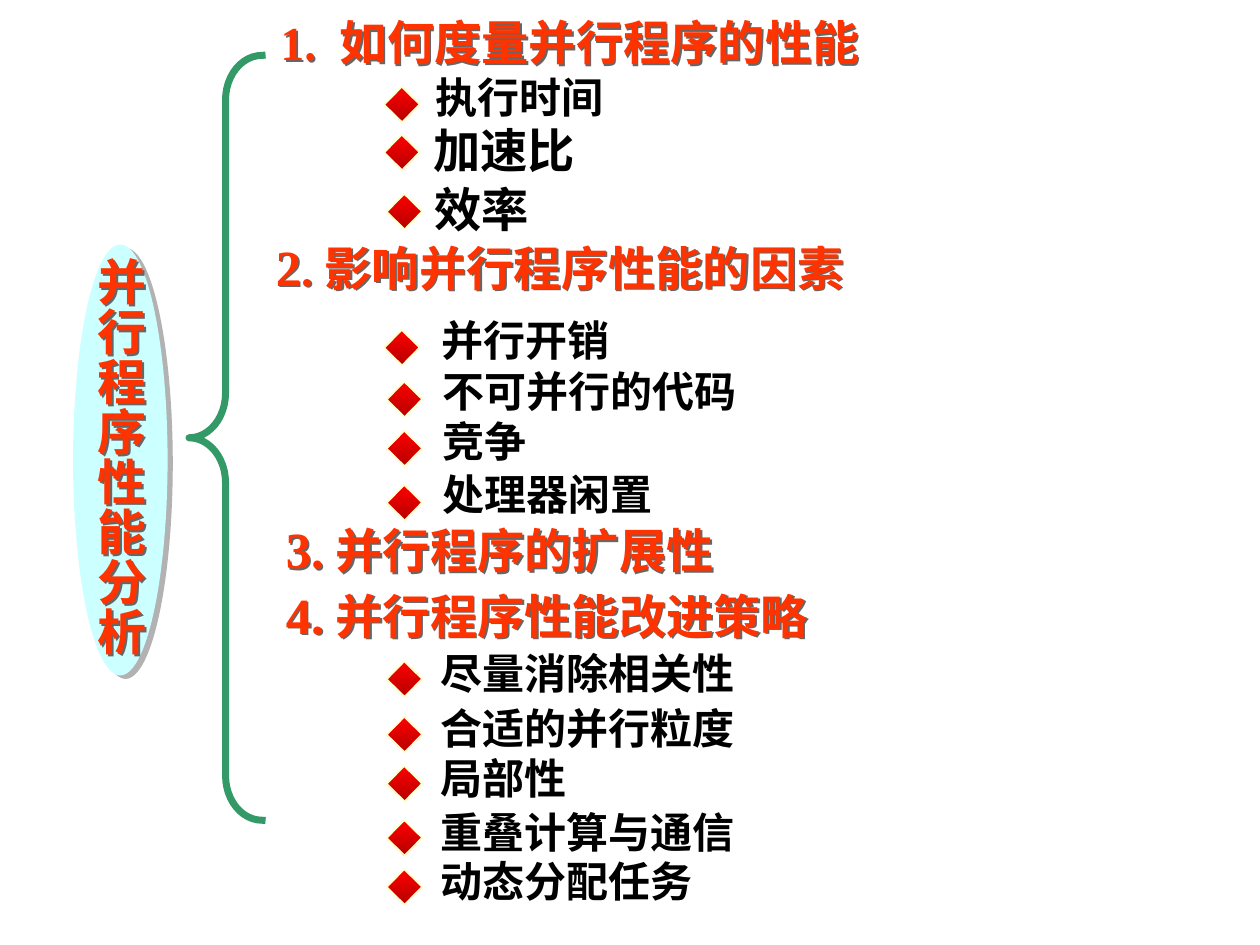
import pptx
import pptx.util
import pptx.dml.color
import pptx.enum.shapes
import pptx.enum.text
import pptx.oxml
import pptx.oxml.ns

INK = {"head": "FF3300", "item": "000000", "oval": "CCFFFF", "brace": "339966",
       "hot": "FF0000", "dark": "B60000", "edge": "FFFFCC",
       "shade": "B2B2B2", "glow": "666666"}
FONT = "Times New Roman"
HEADS = [
    (2.13, 0.06, 5.63, 0.56, [("1.  如何度量并行程序的性能", 27)]),
    (2.09, 1.82, 5.12, 0.59, [("2", 29), (". 影响并行程序性能的因素", 27)]),
    (2.17, 4.06, 6.35, 0.58, [("3.", 29), (" 并行程序的扩展性", 27)]),
    (2.17, 4.58, 6.35, 0.58, [("4.", 29), (" 并行程序性能改进策略", 27)]),
]
ITEMS = [
    ("执行时间", 24, 3.36, 0.52, 4.72, 3.09, 0.73),
    ("加速比", 27, 3.34, 0.91, 5.76, 3.09, 1.11),
    ("效率", 27, 3.35, 1.38, 5.76, 3.11, 1.58),
    ("并行开销", 24, 3.41, 2.45, 4.1, 3.09, 2.66),
    ("不可并行的代码", 24, 3.41, 2.85, 4.65, 3.11, 3.07),
    ("竞争", 24, 3.41, 3.25, 4.65, 3.11, 3.46),
    ("处理器闲置", 24, 3.41, 3.67, 4.65, 3.11, 3.89),
    ("尽量消除相关性", 24, 3.4, 5.09, 5.33, 3.11, 5.29),
    ("合适的并行粒度", 24, 3.4, 5.53, 5.33, 3.11, 5.73),
    ("局部性", 24, 3.4, 5.92, 5.33, 3.11, 6.12),
    ("重叠计算与通信", 24, 3.4, 6.35, 5.33, 3.11, 6.55),
    ("动态分配任务", 24, 3.4, 6.74, 5.33, 3.11, 6.94),
]
TITLE = "并行程序性能分析"
SIDE = 0.2
KIND = pptx.enum.shapes.MSO_SHAPE
Inches, Pt = pptx.util.Inches, pptx.util.Pt


def tint(name):
    return pptx.dml.color.RGBColor.from_string(INK[name])


def cast(shape, name, dist, angle):
    shape._element.spPr.append(pptx.oxml.parse_xml(
        f'<a:effectLst {pptx.oxml.ns.nsdecls("a")}>'
        f'<a:outerShdw dist="{Pt(dist)}" dir="{angle * 60000}" algn="ctr" rotWithShape="0">'
        f'<a:srgbClr val="{INK[name]}"/></a:outerShdw></a:effectLst>'))


def write(home, spot, runs, ink, dist=0):
    box = home.add_textbox(*map(Inches, spot))
    if dist:
        cast(box, "glow", dist, 45)
    frame = box.text_frame
    frame.word_wrap = True
    frame.auto_size = pptx.enum.text.MSO_AUTO_SIZE.SHAPE_TO_FIT_TEXT
    para = frame.paragraphs[0]
    for text, size in runs:
        run = para.add_run()
        run.text = text
        font = run.font
        font.name, font.size, font.bold = FONT, Pt(size), True
        font.color.rgb = tint(ink)
    return para


def draw(home, kind, spot):
    shape = home.add_shape(kind, *map(Inches, spot))
    shape.shadow.inherit = False
    return shape


def mark(home, left, top):
    gem = draw(home, KIND.RECTANGLE, (left, top, SIDE, SIDE))
    gem.rotation = 44.4
    gem.fill.gradient()
    gem.fill.gradient_angle = 315
    for stop, name, place in zip(gem.fill.gradient_stops, ("hot", "dark"), (0, 1)):
        stop.color.rgb = tint(name)
        stop.position = place
    gem.line.color.rgb = tint("edge")
    gem.line.width = Pt(1)


def main():
    deck = pptx.Presentation()
    deck.slide_width, deck.slide_height = Inches(10), Inches(7.5)
    shapes = deck.slides.add_slide(deck.slide_layouts[6]).shapes

    for *spot, runs in HEADS:
        write(shapes, spot, runs, "head", 1.3)

    brace = draw(shapes, KIND.LEFT_BRACE, (1.5, 0.44, 0.58, 6.07))
    brace.adjustments[0], brace.adjustments[1] = 0.61, 0.5
    brace.fill.background()
    brace.line.color.rgb = tint("brace")
    brace.line.width = Pt(4)
    brace.line._get_or_add_ln().set("cap", "sq")

    for text, size, left, top, width, *gem in ITEMS:
        group = shapes.add_group_shape().shapes
        tall = 0.56 if size > 24 else 0.51
        write(group, (left, top, width, tall), [(text, size)], "item")
        mark(group, *gem)

    group = shapes.add_group_shape().shapes
    oval = group.add_shape(KIND.OVAL, *map(Inches, (0.58, 1.94, 0.75, 3.42)))
    oval.fill.solid()
    oval.fill.fore_color.rgb = tint("oval")
    oval.line.fill.background()
    cast(oval, "shade", 3.6, 34)
    para = write(group, (0.67, 2.02, 0.6, 3.29), [(TITLE, 28)], "head", 1.8)
    para.alignment = pptx.enum.text.PP_ALIGN.CENTER
    para.line_spacing = 0.85

    deck.save("out.pptx")


if __name__ == "__main__":
    main()
